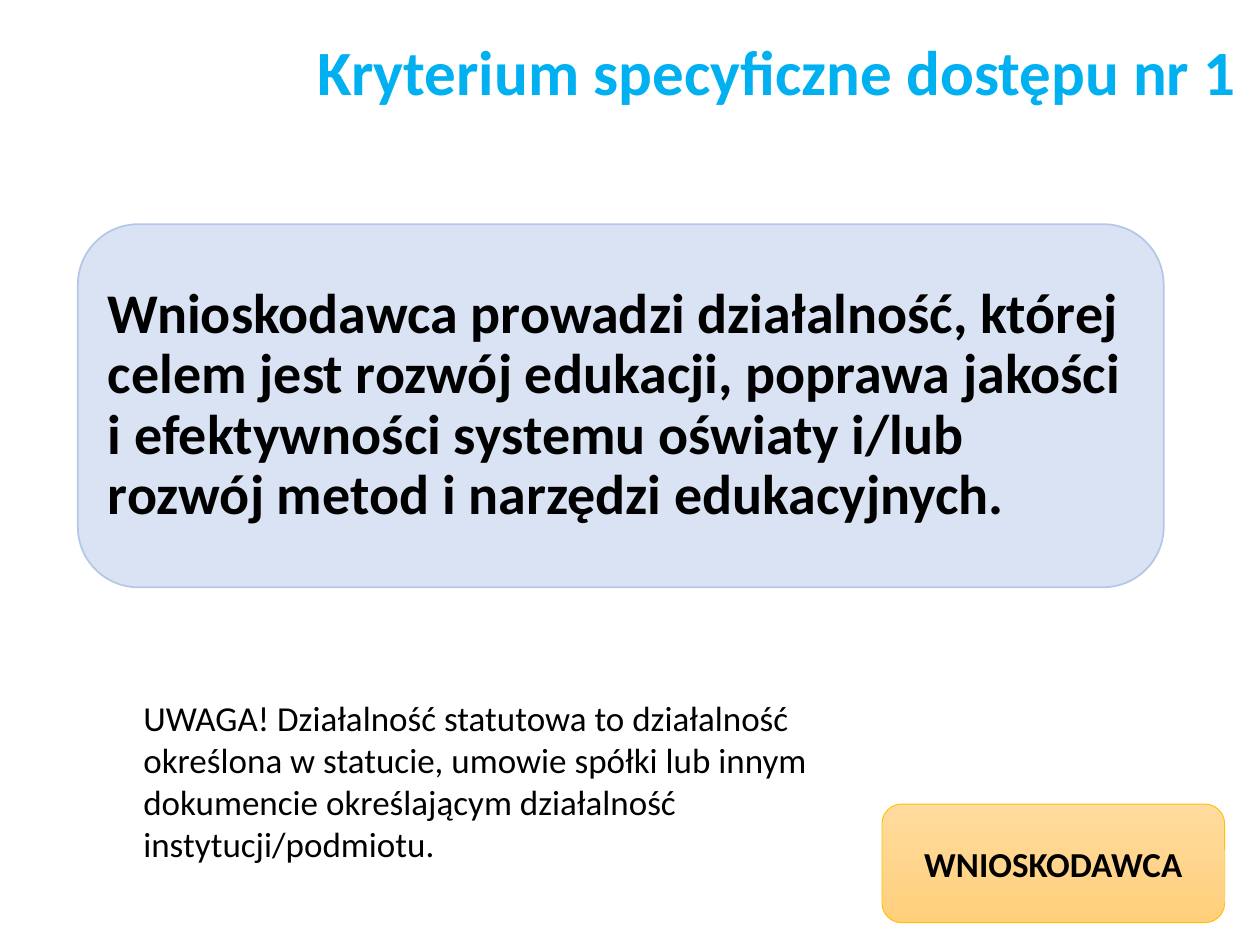
"""Build the slide on specific access criterion no. 1."""
from pptx import Presentation, util as u
from pptx.dml.color import RGBColor
from pptx.enum import shapes, text

COLORS = {
    "title": "00B0F0", "text": "000000",
    "criterion_fill": "DAE3F3", "criterion_line": "B4C7E7",
    "button_top": "FFDB9E", "button_bottom": "FFD07C", "button_line": "FFC000",
}


def rgb(name):
    return RGBColor.from_string(COLORS[name])


def write(sp, words, size, color="text", bold=True, align=text.PP_ALIGN.LEFT,
          anchor=text.MSO_ANCHOR.MIDDLE, spacing=None):
    tf = sp.text_frame
    tf.word_wrap = True
    tf.vertical_anchor = anchor
    p = tf.paragraphs[0]
    p.text = words
    p.alignment = align
    p.line_spacing = spacing
    p.font.name = "Calibri"
    p.font.size = u.Pt(size)
    p.font.bold = bold
    p.font.color.rgb = rgb(color)


prs = Presentation()
prs.slide_width, prs.slide_height = u.Cm(25.4), u.Cm(19.05)
s = prs.slides.add_slide(prs.slide_layouts[5])

title = s.shapes.title
title.left, title.top = u.Cm(5.92), u.Cm(0)
title.width, title.height = u.Cm(19.48), u.Cm(3.02)
write(title, "Kryterium specyficzne dostępu nr 1", 36, "title",
      align=text.PP_ALIGN.CENTER, spacing=0.9)

criterion = s.shapes.add_shape(shapes.MSO_SHAPE.ROUNDED_RECTANGLE,
                               u.Cm(1.57), u.Cm(4.52), u.Cm(21.89), u.Cm(7.32))
criterion.fill.solid()
criterion.fill.fore_color.rgb = rgb("criterion_fill")
write(criterion, "Wnioskodawca prowadzi działalność, której celem jest rozwój "
      "edukacji, poprawa jakości i efektywności systemu oświaty i/lub rozwój "
      "metod i narzędzi edukacyjnych.", 32, spacing=0.9)

note = s.shapes.add_textbox(u.Cm(2.64), u.Cm(13.92), u.Cm(16.1), u.Cm(3.68))
write(note, "UWAGA! Działalność statutowa to działalność określona w statucie, "
      "umowie spółki lub innym dokumencie określającym działalność "
      "instytucji/podmiotu.", 20, bold=False, anchor=text.MSO_ANCHOR.TOP)
note.text_frame.auto_size = text.MSO_AUTO_SIZE.SHAPE_TO_FIT_TEXT

button = s.shapes.add_shape(shapes.MSO_SHAPE.ROUNDED_RECTANGLE,
                            u.Cm(17.78), u.Cm(16.21), u.Cm(6.91), u.Cm(2.39))
button.fill.gradient()
button.fill.gradient_angle = 270
for stop, name in zip(button.fill.gradient_stops, ("button_top", "button_bottom")):
    stop.color.rgb = rgb(name)
write(button, "WNIOSKODAWCA", 20, align=text.PP_ALIGN.CENTER)

for sp, name, width in ((criterion, "criterion_line", 1), (button, "button_line", 0.5)):
    sp.shadow.inherit = False
    sp.line.color.rgb = rgb(name)
    sp.line.width = u.Pt(width)

prs.save("out.pptx")
